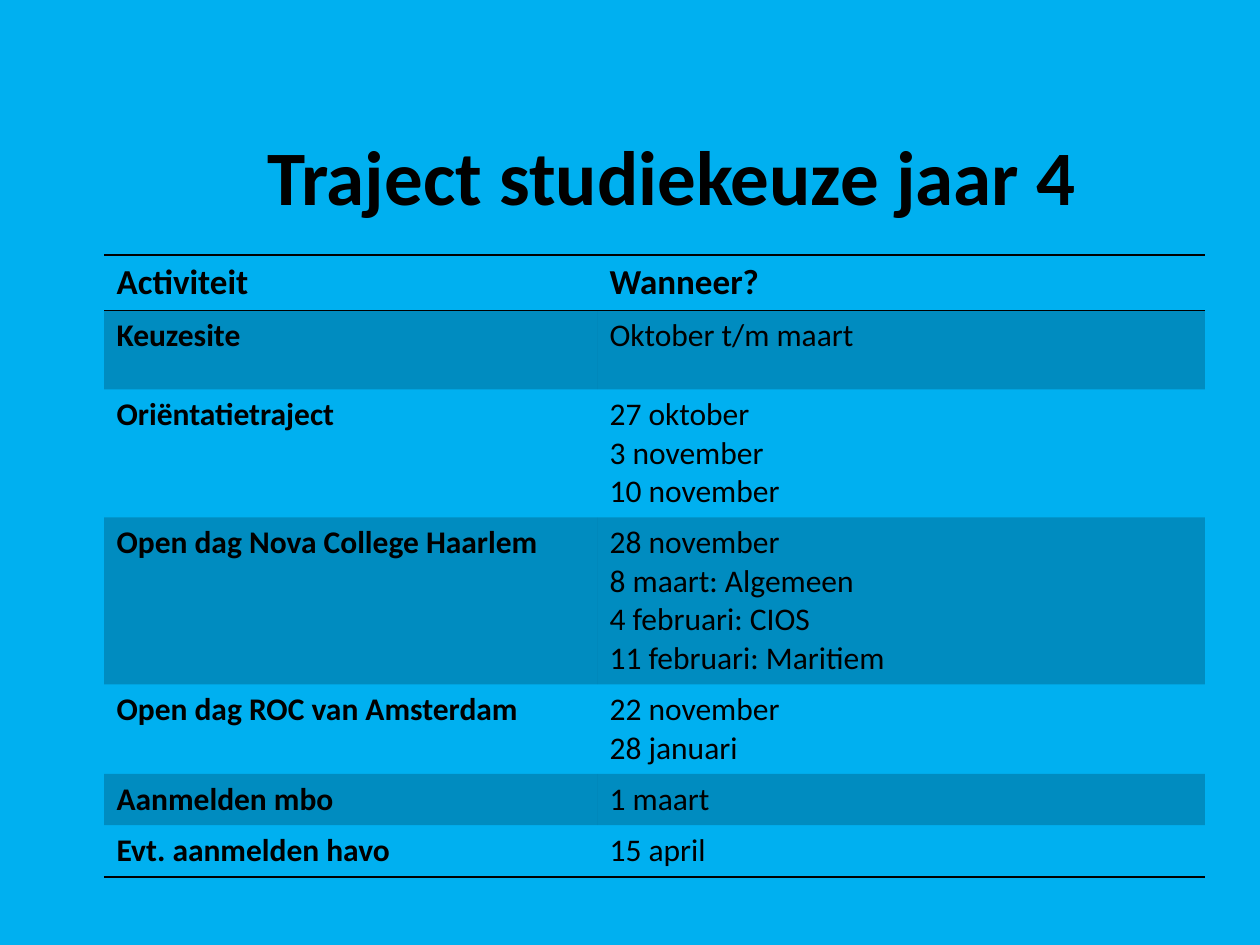
from dataclasses import dataclass

from lxml import etree
from pptx import Presentation
from pptx import util as u
from pptx.dml.color import RGBColor
from pptx.enum import text
from pptx.oxml import ns

PX_PER_INCH = 126
NO_STYLE = "{2D5ABB26-0587-4C30-8999-92F81FD0307C}"


@dataclass(frozen=True)
class Theme:
    font: str = "Calibri"
    background: str = "00B0F0"
    ink: str = "000000"
    band_opacity: int = 20
    title: int = 44
    header: int = 20
    body: int = 18
    rule: int = 1


@dataclass(frozen=True)
class Row:
    height: int
    activity: str
    dates: tuple[str, ...]


THEME = Theme()
COLUMNS = (493, 608)
ROWS = (
    Row(55, "Activiteit", ("Wanneer?",)),
    Row(79, "Keuzesite", ("Oktober t/m maart",)),
    Row(128, "Oriëntatietraject", ("27 oktober", "3 november", "10 november")),
    Row(167, "Open dag Nova College Haarlem",
        ("28 november", "8 maart: Algemeen", "4 februari: CIOS", "11 februari: Maritiem")),
    Row(89, "Open dag ROC van Amsterdam", ("22 november", "28 januari")),
    Row(51, "Aanmelden mbo", ("1 maart",)),
    Row(52, "Evt. aanmelden havo", ("15 april",)),
)


def px(n: int) -> u.Emu:
    return u.Emu(n * 914400 // PX_PER_INCH)


def write(tf, lines, *, size: int, bold: bool = False, align=text.PP_ALIGN.LEFT) -> None:
    """Write one paragraph for each line."""
    for i, line in enumerate(lines):
        p = tf.paragraphs[0] if i == 0 else tf.add_paragraph()
        p.alignment = align
        r = p.add_run()
        r.text = line
        r.font.name, r.font.size, r.font.bold = THEME.font, u.Pt(size), bold
        r.font.color.rgb = RGBColor.from_string(THEME.ink)


def fill_cell(cell, banded: bool) -> None:
    if not banded:
        cell.fill.background()
        return
    cell.fill.solid()
    cell.fill.fore_color.rgb = RGBColor.from_string(THEME.ink)
    color = cell.fill._xPr.find(".//" + ns.qn("a:srgbClr"))
    etree.SubElement(color, ns.qn("a:alpha"), val=str(THEME.band_opacity * 1000))


def rule_cell(cell, sides: tuple[str, ...]) -> None:
    """Draw borders on the given sides, T before B, ahead of the fill."""
    tc_pr = cell._tc.get_or_add_tcPr()
    for i, side in enumerate(sides):
        ln = etree.Element(ns.qn(f"a:ln{side}"), w=str(u.Pt(THEME.rule)))
        solid = etree.SubElement(ln, ns.qn("a:solidFill"))
        etree.SubElement(solid, ns.qn("a:srgbClr"), val=THEME.ink)
        tc_pr.insert(i, ln)


def add_title(s, title: str) -> None:
    sp = s.shapes.title
    sp.left, sp.top, sp.width, sp.height = map(px, (105, 96, 1134, 158))
    tf = sp.text_frame
    tf.vertical_anchor = text.MSO_ANCHOR.MIDDLE
    write(tf, [title], size=THEME.title, bold=True, align=text.PP_ALIGN.CENTER)


def add_schedule(s, rows: tuple[Row, ...]) -> None:
    heights = sum(row.height for row in rows)
    sp = s.shapes.add_table(len(rows), len(COLUMNS), px(104), px(255),
                            px(sum(COLUMNS)), px(heights))
    table = sp.table
    table._tbl.tblPr.find(ns.qn("a:tableStyleId")).text = NO_STYLE
    for column, width in zip(table.columns, COLUMNS):
        column.width = px(width)

    rules = {0: ("T", "B"), len(rows) - 1: ("B",)}
    for i, row in enumerate(rows):
        table.rows[i].height = px(row.height)
        header = i == 0
        for j, lines in enumerate(((row.activity,), row.dates)):
            cell = table.cell(i, j)
            write(cell.text_frame, lines, bold=header or j == 0,
                  size=THEME.header if header else THEME.body)
            fill_cell(cell, banded=i % 2 == 1)
            rule_cell(cell, rules.get(i, ()))


def main() -> None:
    prs = Presentation()
    prs.slide_width, prs.slide_height = px(1260), px(945)
    s = prs.slides.add_slide(prs.slide_layouts[5])

    # Background
    s.background.fill.solid()
    s.background.fill.fore_color.rgb = RGBColor.from_string(THEME.background)

    # Title and schedule
    add_title(s, "Traject studiekeuze jaar 4")
    add_schedule(s, ROWS)
    prs.save("out.pptx")


if __name__ == "__main__":
    main()
